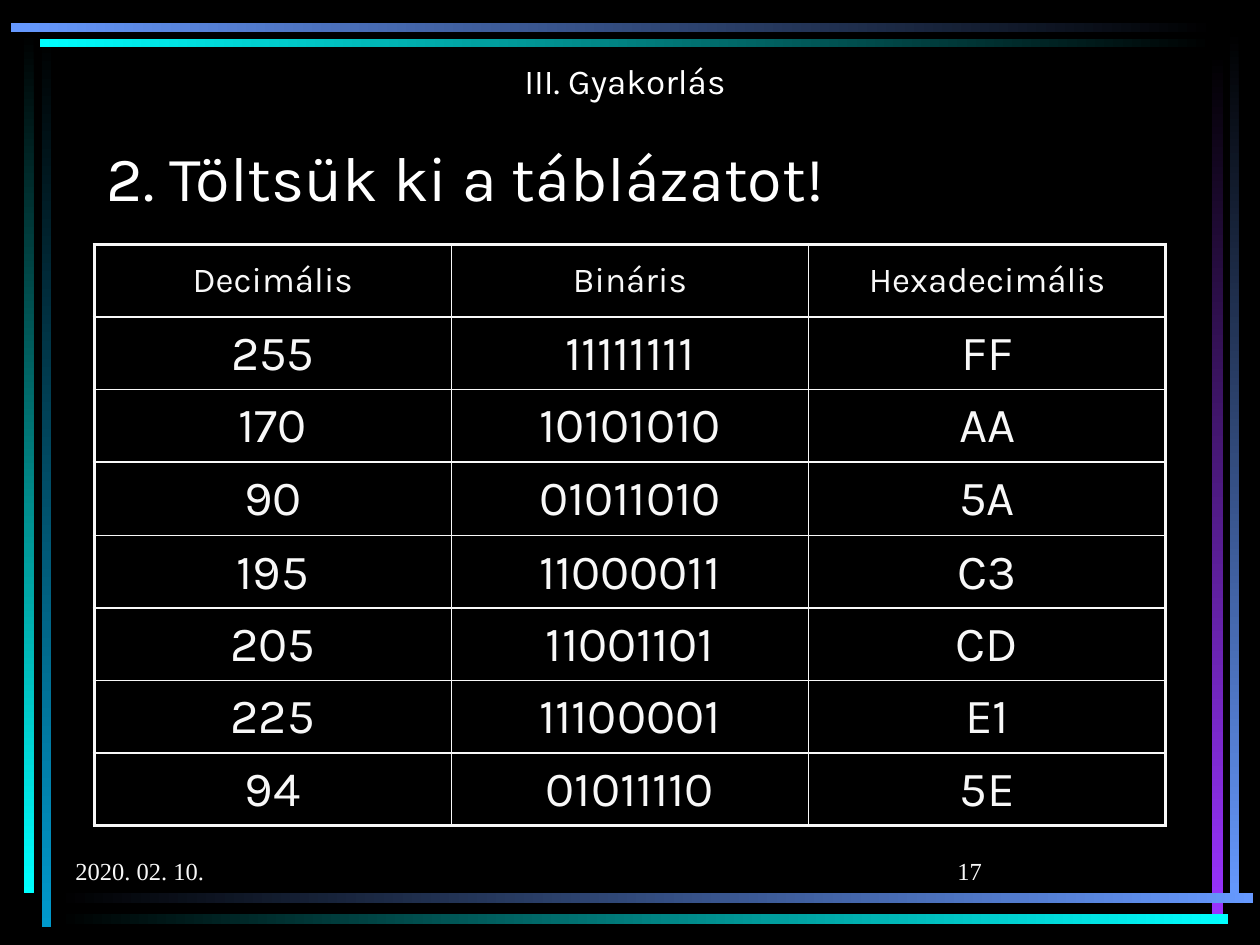
from lxml import etree
from pptx import Presentation
from pptx.dml.color import RGBColor
from pptx.enum.shapes import MSO_SHAPE
from pptx.enum.text import MSO_ANCHOR, PP_ALIGN
from pptx.oxml.ns import qn
from pptx.util import Cm, Pt

RECT = MSO_SHAPE.RECTANGLE
MID, LOW = MSO_ANCHOR.MIDDLE, MSO_ANCHOR.BOTTOM
LEFT, CENTER = PP_ALIGN.LEFT, PP_ALIGN.CENTER

# Content
TITLE = "2. Töltsük ki a táblázatot!"
TOPIC = "III. Gyakorlás"
DATE, PAGE = "2020. 02. 10.", "17"
HEADS = ["Decimális", "Bináris", "Hexadecimális"]
ROWS = [
    ("255", "11111111", "FF"),
    ("170", "10101010", "AA"),
    ("90", "01011010", "5A"),
    ("195", "11000011", "C3"),
    ("205", "11001101", "CD"),
    ("225", "11100001", "E1"),
    ("94", "01011110", "5E"),
]

THEME = {
    "black": "000000", "white": "FFFFFF", "pale": "F8F8F8",
    "cyan": "00FFFF", "teal": "0099CC", "blue": "6699FF", "violet": "9933FF",
    "font": "Karla", "serif": "Times New Roman",
    "title": 36, "value": 28, "head": 20, "foot": 14,
    "thick": 2.25, "thin": 1,
}

# Frame bars in cm: left, top, width, height, first colour, last colour
BARS = [
    (0.84, 0.71, 0.2, 17.98, "black", "teal"),
    (0.48, 0.64, 0.2, 17.37, "black", "cyan"),
    (24.79, 0.61, 0.18, 17.6, "black", "blue"),
    (24.43, 1.07, 0.23, 17.35, "black", "violet"),
    (1.14, 18.01, 24.13, 0.2, "black", "blue"),
    (1.14, 18.42, 23.62, 0.2, "black", "cyan"),
    (0.81, 0.79, 23.67, 0.15, "cyan", "black"),
    (0.22, 0.47, 24.28, 0.18, "blue", "black"),
]

# Table grid in cm
GRID_X, GRID_Y, COL_W = 1.9, 4.93, 7.2
ROW_H = [1.46] * 3 + [1.49] + [1.46] * 4
LIFT = 0.05  # values sit slightly above their cells


def tint(name):
    return RGBColor.from_string(THEME[name])


def write(frame, text, size, color="pale", font="font", align=LEFT, gap=0):
    para = frame.paragraphs[0]
    para.text = text
    para.alignment = align
    para.space_before = Pt(gap)
    para.font.size = Pt(THEME[size])
    para.font.name = THEME[font]
    para.font.color.rgb = tint(color)


def label(slide, box, text, size, anchor, **style):
    frame = slide.shapes.add_textbox(*map(Cm, box)).text_frame
    frame.word_wrap = True
    frame.vertical_anchor = anchor
    write(frame, text, size, **style)


def add_bar(slide, left, top, width, height, first, last):
    bar = slide.shapes.add_shape(RECT, Cm(left), Cm(top), Cm(width), Cm(height))
    bar.shadow.inherit = False
    bar.line.fill.background()
    bar.fill.gradient()
    bar.fill.gradient_angle = 270 if height > width else 0
    for stop, name in zip(bar.fill.gradient_stops, (first, last)):
        stop.color.rgb = tint(name)


def edge(cell, side, width):
    line = etree.SubElement(cell._tc.get_or_add_tcPr(), qn("a:ln" + side),
                            w=str(Pt(width)))
    fill = etree.SubElement(line, qn("a:solidFill"))
    etree.SubElement(fill, qn("a:srgbClr"), val=THEME["pale"])


def add_grid(slide):
    rows, cols = len(ROW_H), len(HEADS)
    table = slide.shapes.add_table(rows, cols, Cm(GRID_X), Cm(GRID_Y),
                                   Cm(COL_W * cols), Cm(sum(ROW_H))).table
    table.first_row = table.horz_banding = False
    for col in table.columns:
        col.width = Cm(COL_W)
    for r, high in enumerate(ROW_H):
        table.rows[r].height = Cm(high)
        for c in range(cols):
            cell = table.cell(r, c)
            cell.vertical_anchor = MID
            # Outer edges are thick, inner ones thin
            outer = {"L": c == 0, "R": c == cols - 1,
                     "T": r == 0, "B": r == rows - 1}
            for side, thick in outer.items():
                edge(cell, side, THEME["thick" if thick else "thin"])
            cell.fill.background()
    for c, head in enumerate(HEADS):
        write(table.cell(0, c).text_frame, head, "head", align=CENTER, gap=4)


def add_values(slide):
    for r, row in enumerate(ROWS, 1):
        top = GRID_Y + sum(ROW_H[:r]) - LIFT
        for c, value in enumerate(row):
            box = (GRID_X + c * COL_W, top, COL_W, ROW_H[r])
            label(slide, box, value, "value", MID, align=CENTER, gap=5.6)


def main():
    deck = Presentation()
    deck.slide_width, deck.slide_height = Cm(25.4), Cm(19.05)
    slide = deck.slides.add_slide(deck.slide_layouts[6])
    slide.background.fill.solid()
    slide.background.fill.fore_color.rgb = tint("black")

    # Frame
    for bar in BARS:
        add_bar(slide, *bar)

    # Footer
    for left, text in ((1.27, DATE), (19.05, PAGE)):
        label(slide, (left, 16.71, 5.28, 1.27), text, "foot", LOW, font="serif")

    # Table and the values laid over it
    add_grid(slide)
    add_values(slide)

    # Headings
    label(slide, (1.9, 1.7, 21.6, 2.74), TITLE, "title", LOW, color="white")
    label(slide, (5.08, 1.07, 15.04, 1.09), TOPIC, "head", MSO_ANCHOR.TOP,
          color="white", align=CENTER, gap=10)

    deck.save("out.pptx")


if __name__ == "__main__":
    main()
